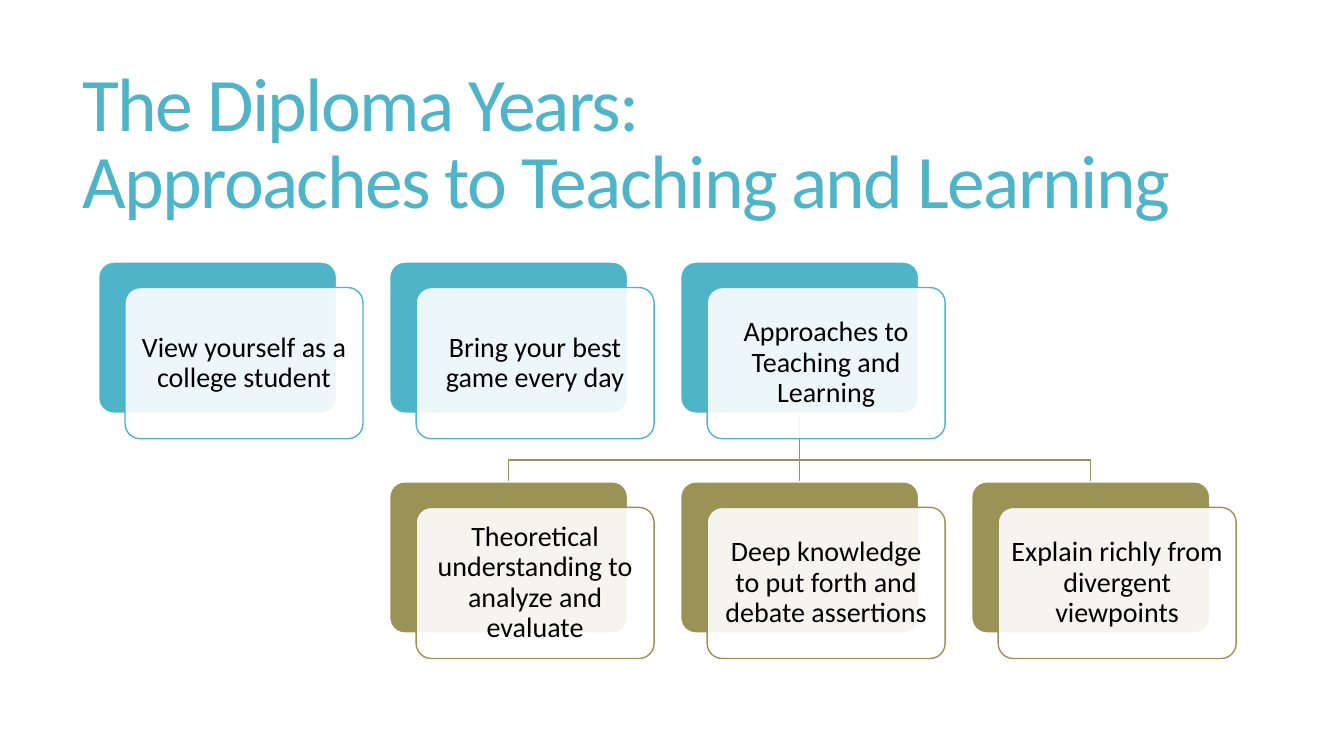
from lxml import etree
from pptx import Presentation
from pptx.dml.color import RGBColor
from pptx.enum.shapes import MSO_SHAPE
from pptx.enum.text import MSO_ANCHOR, MSO_AUTO_SIZE, PP_ALIGN
from pptx.oxml.ns import qn
from pptx.util import Pt

ROUND = MSO_SHAPE.ROUNDED_RECTANGLE
MIDDLE = MSO_ANCHOR.MIDDLE
NO_FIT = MSO_AUTO_SIZE.NONE
LEFT, CENTER = PP_ALIGN.LEFT, PP_ALIGN.CENTER

TEAL = RGBColor(0x50, 0xB4, 0xC8)
OLIVE = RGBColor(0x9B, 0x92, 0x56)
WHITE = RGBColor(0xFF, 0xFF, 0xFF)
BLACK = RGBColor(0x00, 0x00, 0x00)

# Card grid, in points
CARD_W, CARD_H = 170, 108
COL_X, COL_STEP = 70.4, 207.9
TOP_Y, LOW_Y = 187.2, 344.2
SHIFT_X, SHIFT_Y = 18.9, 18.2
BEND_Y = 328.5

TOP = ["View yourself as a college student",
       "Bring your best game every day",
       "Approaches to Teaching and Learning"]
LOW = ["Theoretical understanding to analyze and evaluate",
       "Deep knowledge to put forth and debate assertions",
       "Explain richly from divergent viewpoints"]


def col_x(col):
    return COL_X + col * COL_STEP


class Board:
    face = "Calibri"

    def __init__(self, slide):
        self.slide = slide
        self.shapes = slide.shapes

    def label(self, shape, text, size, color, align, space):
        frame = shape.text_frame
        frame.text = text
        frame.word_wrap = True
        frame.auto_size = NO_FIT
        frame.vertical_anchor = MIDDLE
        para = frame.paragraphs[0]
        para.alignment = align
        para.line_spacing = space
        para.font.name = self.face
        para.font.size = Pt(size)
        para.font.color.rgb = color
        return frame

    def title(self, text, x, y, w, h):
        shape = self.shapes.title
        shape.left, shape.top = Pt(x), Pt(y)
        shape.width, shape.height = Pt(w), Pt(h)
        frame = self.label(shape, text, 54, TEAL, LEFT, 0.85)
        for run in frame.paragraphs[0].runs:
            run._r.get_or_add_rPr().set("spc", "-120")

    def line(self, points, color):
        start, *rest = [(Pt(x), Pt(y)) for x, y in points]
        route = self.shapes.build_freeform(*start)
        route.add_line_segments(rest, close=False)
        shape = route.convert_to_shape()
        shape.shadow.inherit = False
        shape.fill.background()
        shape.line.color.rgb = color
        shape.line.width = Pt(1)

    def box(self, x, y, fill, edge):
        shape = self.shapes.add_shape(
            ROUND, Pt(x), Pt(y), Pt(CARD_W), Pt(CARD_H))
        shape.adjustments[0] = 0.1
        shape.shadow.inherit = False
        shape.fill.solid()
        shape.fill.fore_color.rgb = fill
        shape.line.color.rgb = edge
        shape.line.width = Pt(1)
        return shape

    def card(self, text, x, y, color):
        self.box(x, y, color, WHITE)
        front = self.box(x + SHIFT_X, y + SHIFT_Y, WHITE, color)
        # Let the back box show faintly through the front one
        tint = front._element.spPr.find(qn("a:solidFill"))[0]
        etree.SubElement(tint, qn("a:alpha")).set("val", "90000")
        frame = self.label(front, text, 20, BLACK, CENTER, 0.9)
        frame.margin_left = frame.margin_right = Pt(6)
        frame.margin_top = frame.margin_bottom = Pt(6)


def main():
    deck = Presentation()
    deck.slide_width, deck.slide_height = Pt(960), Pt(540)
    board = Board(deck.slides.add_slide(deck.slide_layouts[5]))

    # Title
    board.title("The Diploma Years:\vApproaches to Teaching and Learning",
                51.8, 39.6, 848.2, 130.3)

    # Branches from the third top card to the lower row
    root = col_x(2) + CARD_W / 2
    for col in (3, 2, 1):
        end = col_x(col) + CARD_W / 2
        points = [(root, TOP_Y + CARD_H), (end, LOW_Y)]
        if end != root:
            points[1:1] = [(root, BEND_Y), (end, BEND_Y)]
        board.line(points, OLIVE)

    # Cards: the lower row starts one column in
    for texts, first, y, color in ((TOP, 0, TOP_Y, TEAL),
                                   (LOW, 1, LOW_Y, OLIVE)):
        for col, text in enumerate(texts, first):
            board.card(text, col_x(col), y, color)

    deck.save("out.pptx")


if __name__ == "__main__":
    main()
